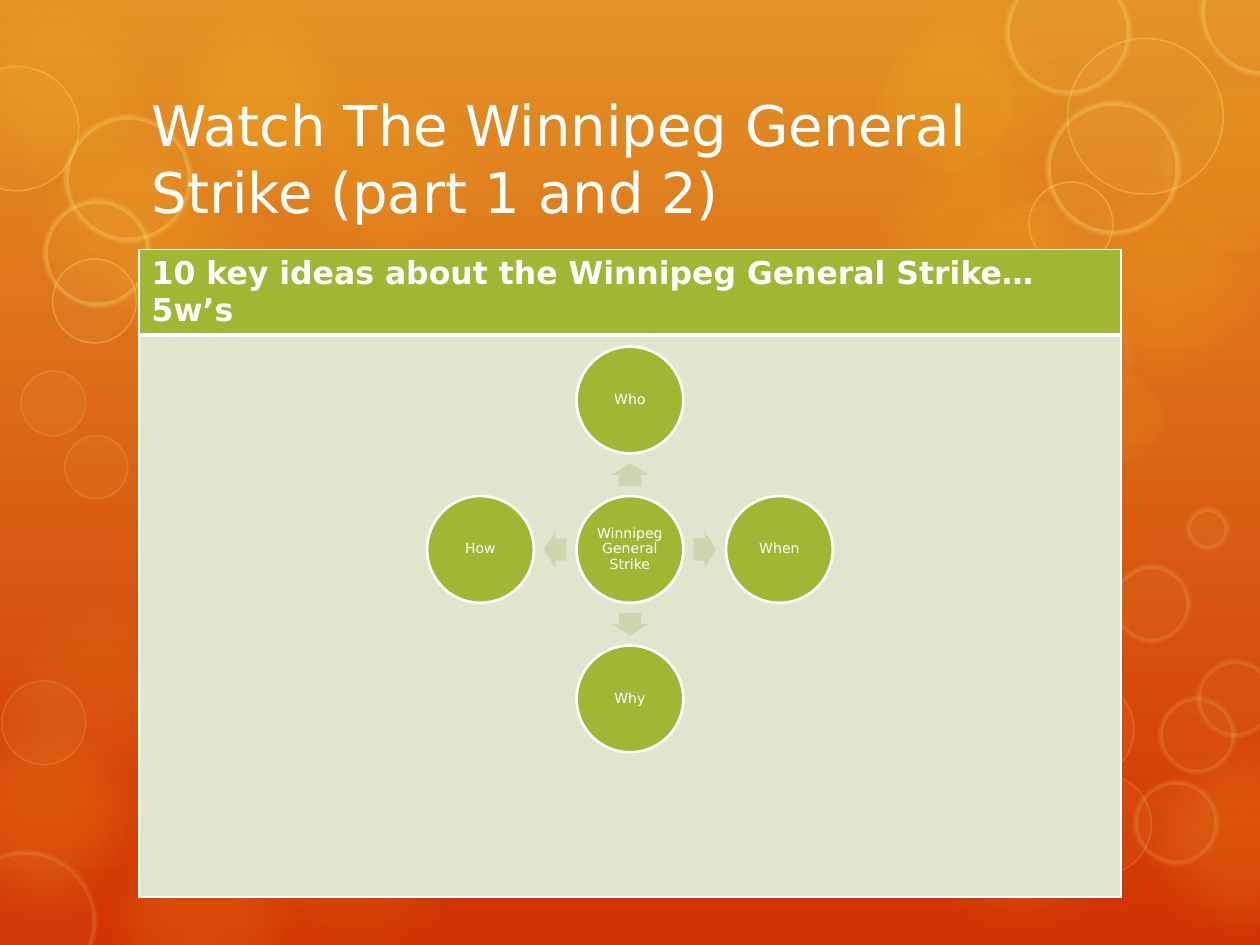
from math import cos, pi, sin

from lxml import etree
from pptx import Presentation
from pptx.dml.color import RGBColor
from pptx.enum.shapes import MSO_SHAPE
from pptx.enum.text import MSO_ANCHOR, MSO_AUTO_SIZE, PP_ALIGN
from pptx.oxml.ns import qn
from pptx.util import Pt

OVAL, ARROW = MSO_SHAPE.OVAL, MSO_SHAPE.RIGHT_ARROW
MIDDLE, TOP = MSO_ANCHOR.MIDDLE, MSO_ANCHOR.TOP
LEFT, CENTER = PP_ALIGN.LEFT, PP_ALIGN.CENTER
FONT = "DejaVu Sans"
WHITE, GREEN, PALE, ARROW_GREEN = "FFFFFF", "A1B633", "E0E5CE", "CDD7AE"
GOLD, CREAM, LEMON = "FDC61B", "FEEBAE", "FFE281"
WIDTH, HEIGHT = 720, 540

# Soft glows: left, top, diameter, opacity
GLOWS = [
    (-18, 318, 150, 8), (41, 86, 150, 10), (148, 22, 150, 10),
    (41, 451, 150, 16), (-40, -23, 150, 14), (73, -13, 150, 20),
    (0, 52, 150, 15), (482, -21, 150, 10), (590, 86, 150, 15),
    (634, 405, 150, 16), (-49, 390, 150, 16), (482, 62, 150, 15),
    (508, 405, 150, 10), (125, 429, 150, 8), (486, 189, 96, 10),
]
# Outlined circles: fill, opacity, line, width, line opacity, soft edge,
# then left, top, diameter of each
RINGS = [
    (GOLD, 10, CREAM, 14, 6, 10, [
        (661, 47, 99), (500, 17, 82), (541, 114, 96), (568, 161, 82),
        (610, 210, 57)]),
    (LEMON, 5, LEMON, 1, 15, 0, [
        (1, 389, 48), (600, 442, 58), (590, 388, 58), (12, 212, 37),
        (37, 249, 36)]),
    (LEMON, 5, LEMON, 5, 15, 2, [
        (-26, 486, 81), (648, 446, 48), (636, 323, 44), (662, 398, 44),
        (684, 377, 44), (678, 290, 24)]),
    (LEMON, 5, LEMON, 1, 30, 0, [
        (-26, 38, 71), (610, 22, 89), (588, 104, 48), (30, 148, 48)]),
    (LEMON, 5, LEMON, 5, 30, 2, [
        (37, 66, 72), (25, 114, 61), (575, -17, 71), (686, -29, 72),
        (598, 58, 76)]),
]


def rgb(color):
    return RGBColor.from_string(color)


def paint(fill, color, opacity=100):
    fill.solid()
    fill.fore_color.rgb = rgb(color)
    if opacity < 100:
        clr = next(fill._xPr.iter(qn("a:srgbClr")))
        etree.SubElement(clr, qn("a:alpha"), val=str(opacity * 1000))


def style(sp, fill, opacity=100, line=None, width=0, line_opacity=100):
    sp.shadow.inherit = False
    paint(sp.fill, fill, opacity)
    if line:
        sp.line.width = Pt(width)
        paint(sp.line.fill, line, line_opacity)
    else:
        sp.line.fill.background()


def write(tf, text, size, align=LEFT, anchor=TOP, bold=False):
    tf.word_wrap = True
    tf.vertical_anchor = anchor
    p = tf.paragraphs[0]
    p.alignment = align
    r = p.add_run()
    r.text = text
    r.font.name, r.font.size, r.font.bold = FONT, Pt(size), bold
    r.font.color.rgb = rgb(WHITE)


def add_circle(shapes, left, top, d):
    return shapes.add_shape(OVAL, Pt(left), Pt(top), Pt(d), Pt(d))


def soften(sp, radius):
    effects = sp.element.spPr.find(qn("a:effectLst"))
    etree.SubElement(effects, qn("a:softEdge"), rad=str(Pt(radius)))


def add_backdrop(s):
    fill = s.background.fill
    fill.gradient()
    fill.gradient_angle = 270
    for stop, color in zip(fill.gradient_stops, ("E39325", "D13202")):
        stop.color.rgb = rgb(color)
    circles = []
    for left, top, d, opacity in GLOWS:
        sp = add_circle(s.shapes, left, top, d)
        style(sp, GOLD, opacity)
        soften(sp, 25)
        circles.append(sp)
    for *look, soft, boxes in RINGS:
        for box in boxes:
            sp = add_circle(s.shapes, *box)
            style(sp, *look)
            if soft:
                soften(sp, soft)
            circles.append(sp)
    # The decoration belongs to the layout, behind its placeholders
    tree = s.slide_layout.shapes.element
    for i, sp in enumerate(circles):
        sp.element.nvSpPr.cNvPr.set("id", str(100 + i))
        tree.insert(2 + i, sp.element)


def add_title(s, left, top, width, height):
    title = s.shapes.title
    title.left, title.top = Pt(left), Pt(top)
    title.width, title.height = Pt(width), Pt(height)
    write(title.text_frame, "Watch The Winnipeg General Strike (part 1 and 2)",
          32, anchor=MIDDLE)
    title.text_frame.auto_size = MSO_AUTO_SIZE.NONE


def set_borders(cell, **widths):
    props = cell._tc.get_or_add_tcPr()
    for i, side in enumerate(("L", "R", "T", "B")):
        ln = etree.Element(qn("a:ln" + side), w=str(Pt(widths.get(side, 1))))
        fill = etree.SubElement(ln, qn("a:solidFill"))
        etree.SubElement(fill, qn("a:srgbClr"), val=WHITE)
        props.insert(i, ln)


def add_ideas_table(s, left, top, width, height, header=48):
    table = s.shapes.add_table(2, 1, Pt(left), Pt(top),
                               Pt(width), Pt(height)).table
    table.rows[0].height, table.rows[1].height = Pt(header), Pt(height - header)
    head, body = table.cell(0, 0), table.cell(1, 0)
    paint(head.fill, GREEN)
    paint(body.fill, PALE)
    set_borders(head, B=3)
    set_borders(body, T=3)
    write(head.text_frame, "10 key ideas about the Winnipeg General Strike…5w’s",
          18, bold=True)


def add_radial(s, cx, cy, reach, d=61):
    """Hub at (cx, cy) with four nodes at distance reach."""
    shapes = s.shapes.add_group_shape().shapes

    def add_node(x, y, text):
        sp = add_circle(shapes, x - d / 2, y - d / 2, d)
        style(sp, GREEN, line=WHITE, width=1.5)
        tf = sp.text_frame
        tf.margin_left = tf.margin_right = Pt(0.7)
        tf.margin_top = tf.margin_bottom = Pt(0.7)
        write(tf, text, 8, CENTER, MIDDLE)
        tf.paragraphs[0].line_spacing = 0.9

    add_node(cx, cy, "Winnipeg General Strike")
    arrow_w, arrow_h = 13, 21
    nodes = [("Who", 270), ("When", 0), ("Why", 90), ("How", 180)]
    for text, angle in nodes:
        dx, dy = reach * cos(angle * pi / 180), reach * sin(angle * pi / 180)
        sp = shapes.add_shape(
            ARROW, Pt(cx + dx / 2 - arrow_w / 2), Pt(cy + dy / 2 - arrow_h / 2),
            Pt(arrow_w), Pt(arrow_h))
        sp.rotation = angle
        sp.adjustments[0], sp.adjustments[1] = 0.6, 0.5
        style(sp, ARROW_GREEN)
        add_node(cx + dx, cy + dy, text)


def main():
    prs = Presentation()
    prs.slide_width, prs.slide_height = Pt(WIDTH), Pt(HEIGHT)
    s = prs.slides.add_slide(prs.slide_layouts[5])
    add_backdrop(s)
    add_title(s, 79.5, 53.5, 561, 73)
    add_ideas_table(s, 79.5, 142.5, 561, 369)
    add_radial(s, 360, 314, 85.4)
    prs.save("out.pptx")


if __name__ == "__main__":
    main()
